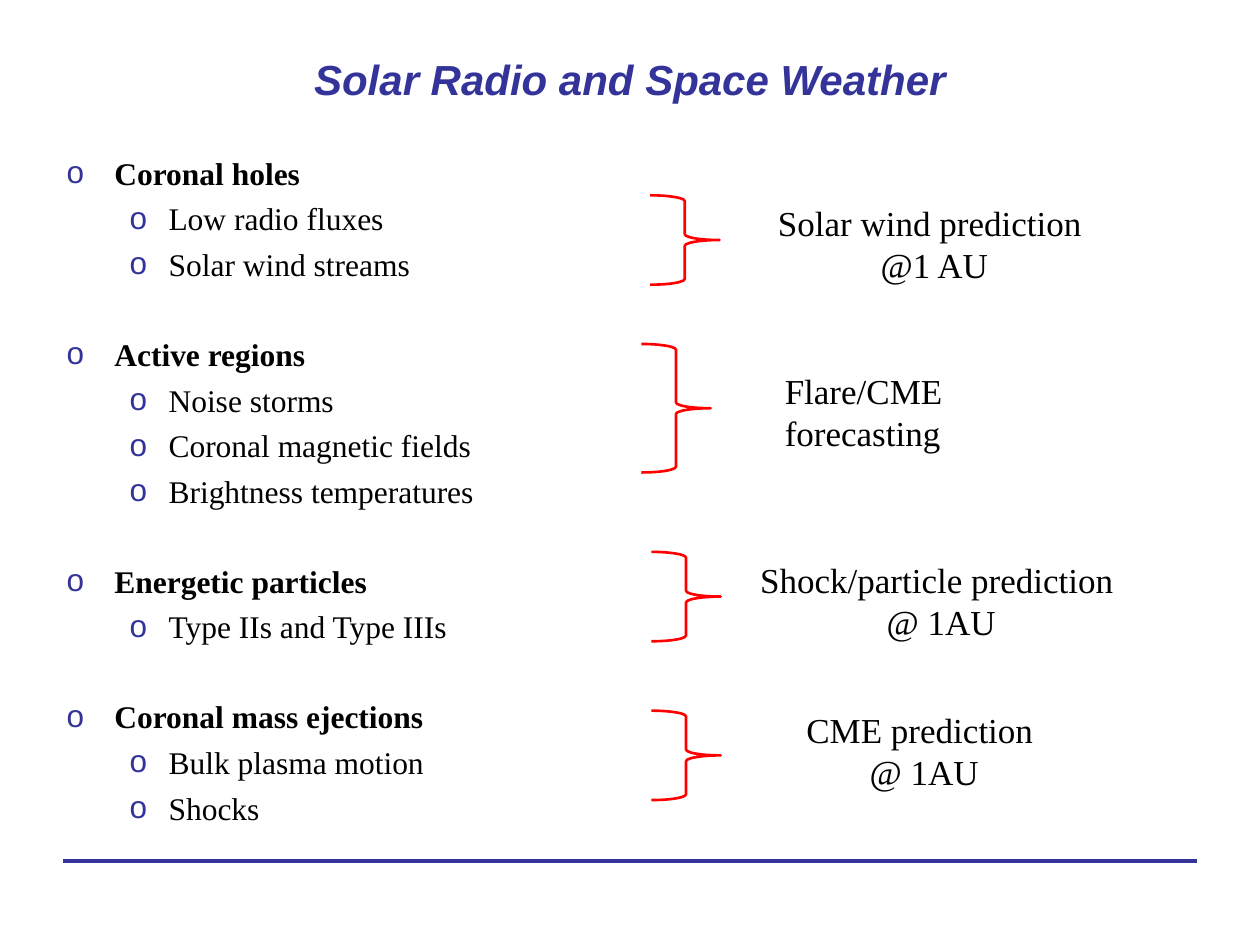
from lxml import etree
from pptx import Presentation
from pptx.dml.color import RGBColor
from pptx.enum.shapes import MSO_CONNECTOR, MSO_SHAPE
from pptx.enum.text import MSO_ANCHOR, PP_ALIGN
from pptx.oxml.ns import qn
from pptx.util import Inches, Pt

BRACE = MSO_SHAPE.RIGHT_BRACE
STRAIGHT = MSO_CONNECTOR.STRAIGHT
MIDDLE, TOP = MSO_ANCHOR.MIDDLE, MSO_ANCHOR.TOP
CENTER, LEFT = PP_ALIGN.CENTER, PP_ALIGN.LEFT

WIDTH, HEIGHT = 10, 7.5
NAVY, BLACK, RED = "333399", "000000", "FF0000"
SERIF, SANS = "Times New Roman", "Arial"
LINE_GAP, SECTION_GAP = 4.5, 29.7  # points before a paragraph

TOPICS = [
    ("Coronal holes", ["Low radio fluxes", "Solar wind streams"]),
    ("Active regions", ["Noise storms", "Coronal magnetic fields",
                        "Brightness temperatures"]),
    ("Energetic particles", ["Type IIs and Type IIIs"]),
    ("Coronal mass ejections", ["Bulk plasma motion", "Shocks"]),
]

# Brace box, label box, label lines, alignment
FORECASTS = [
    ((5.16, 1.55, 0.55, 0.71), (5.08, 1.55, 4.17, 0.77),
     ["Solar wind prediction ", "@1 AU"], CENTER),
    ((5.09, 2.73, 0.55, 1.02), (5.63, 2.88, 2.78, 0.77),
     ["Flare/CME forecasting"], LEFT),
    ((5.17, 4.38, 0.55, 0.71), (5.25, 4.38, 3.94, 0.77),
     ["Shock/particle prediction ", "@ 1AU"], CENTER),
    ((5.17, 5.64, 0.55, 0.71), (5, 5.57, 4.17, 0.77),
     ["CME prediction ", "@ 1AU"], CENTER),
]


def color(hex_string):
    return RGBColor.from_string(hex_string)


def style(paragraph, size, name=SERIF, hex_string=BLACK, bold=False, italic=False):
    for run in paragraph.runs:
        font = run.font
        font.size, font.name = Pt(size), name
        font.bold, font.italic = bold, italic
        font.color.rgb = color(hex_string)


def indent(paragraph, margin, hanging=0):
    properties = paragraph._p.get_or_add_pPr()
    properties.set("marL", str(Inches(margin)))
    properties.set("indent", str(Inches(-hanging)))
    return properties


def add_bullet(paragraph, margin, hanging):
    properties = indent(paragraph, margin, hanging)
    bullet_color = etree.SubElement(properties, qn("a:buClr"))
    etree.SubElement(bullet_color, qn("a:srgbClr"), val=NAVY)
    etree.SubElement(properties, qn("a:buFont"), typeface=SANS)
    etree.SubElement(properties, qn("a:buChar"), char="o")


def add_text(slide, box, lines, anchor=TOP):
    text_frame = slide.shapes.add_textbox(*map(Inches, box)).text_frame
    text_frame.word_wrap = True
    text_frame.vertical_anchor = anchor
    text_frame.text = "\n".join(lines)
    return text_frame


def add_title(slide, box):
    paragraph = add_text(slide, box, ["Solar Radio and Space Weather"], MIDDLE).paragraphs[0]
    paragraph.alignment = CENTER
    style(paragraph, 24, SANS, NAVY, bold=True, italic=True)


def add_topics(slide, box):
    entries = [(text, text == heading)
               for heading, details in TOPICS for text in [heading, *details]]
    text_frame = add_text(slide, box, [text for text, _ in entries])
    text_frame.margin_top = Inches(0.07)
    for index, (paragraph, (_, is_heading)) in enumerate(zip(text_frame.paragraphs, entries)):
        if is_heading:
            add_bullet(paragraph, 0.38, 0.38)
        else:
            paragraph.level = 1
            add_bullet(paragraph, 0.81, 0.31)
        if index:
            paragraph.space_before = Pt(SECTION_GAP if is_heading else LINE_GAP)
        style(paragraph, 18, bold=is_heading)


def add_forecast(slide, brace_box, label_box, lines, alignment):
    brace = slide.shapes.add_shape(BRACE, *map(Inches, brace_box))
    brace.shadow.inherit = False
    brace.fill.background()
    brace.line.color.rgb = color(RED)
    brace.line.width = Pt(1.5)
    for paragraph in add_text(slide, label_box, lines).paragraphs:
        paragraph.level = 1
        paragraph.alignment = alignment
        indent(paragraph, 0.5)
        style(paragraph, 20)


def add_footer_rule(slide, left, right, y):
    rule = slide.shapes.add_connector(STRAIGHT, *map(Inches, (left, y, right, y)))
    rule.line.color.rgb = color(NAVY)
    rule.line.width = Pt(2.25)
    etree.SubElement(rule._element.spPr, qn("a:effectLst"))


def main():
    presentation = Presentation()
    presentation.slide_width, presentation.slide_height = Inches(WIDTH), Inches(HEIGHT)
    slide = presentation.slides.add_slide(presentation.slide_layouts[6])

    add_footer_rule(slide, 0.05 * WIDTH, 0.95 * WIDTH, 6.83)
    add_title(slide, (0.05 * WIDTH, 0, 0.9 * WIDTH, HEIGHT / 6))
    add_topics(slide, (0.43, 1.15, 0.9 * WIDTH, 5.45))
    for forecast in FORECASTS:
        add_forecast(slide, *forecast)

    presentation.save("out.pptx")


if __name__ == "__main__":
    main()
